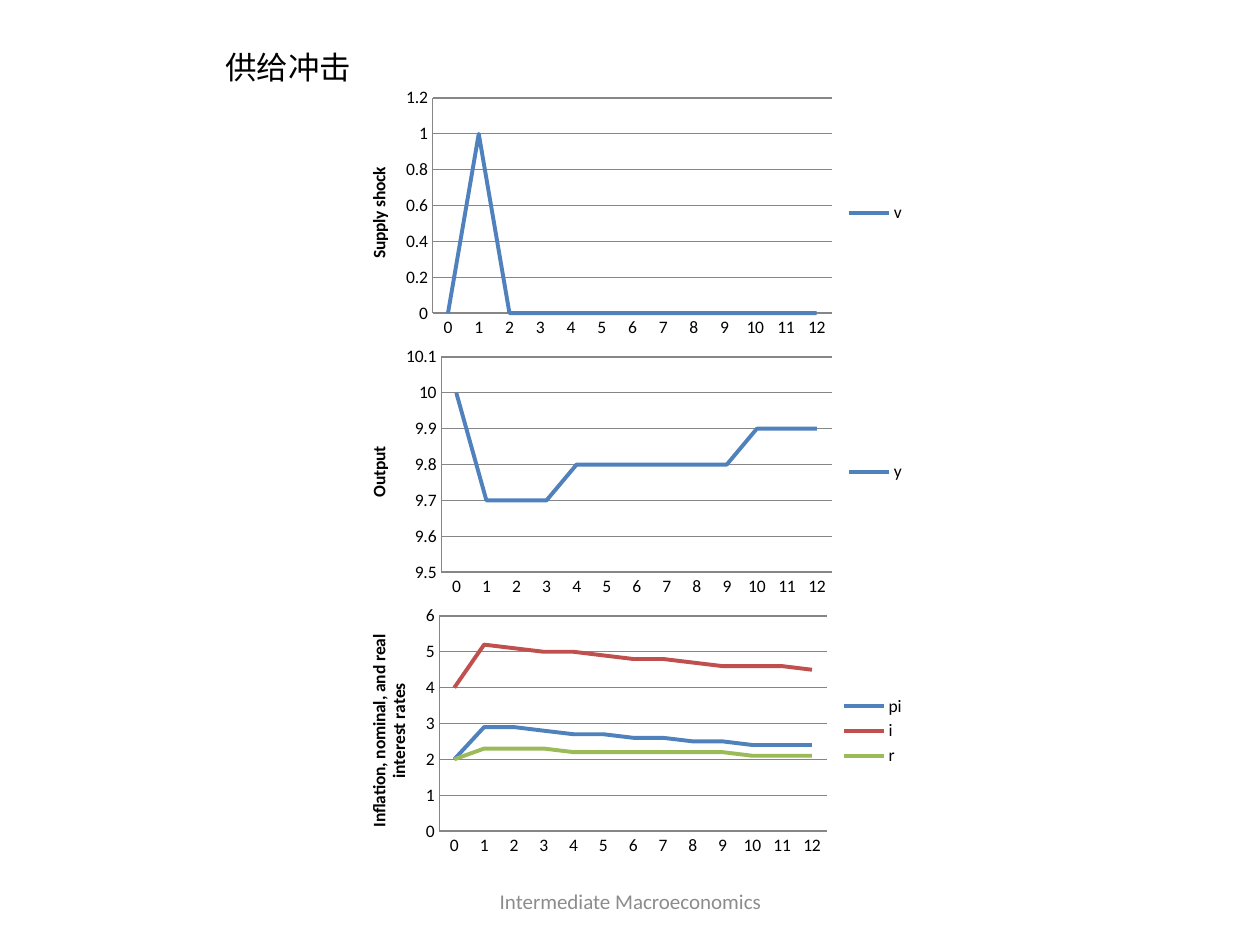
from dataclasses import dataclass

import pptx
import pptx.chart.data
import pptx.dml.color
import pptx.enum.chart
import pptx.enum.text
import pptx.util

SCALE = 914400 / 126
TIMES = [str(t) for t in range(13)]


@dataclass(frozen=True)
class Theme:
    font: str = "Calibri"
    head: int = 18
    foot: int = 12
    small: int = 10
    line: float = 2.25
    ink: str = "000000"
    mute: str = "8C8C8C"
    grid: str = "868686"
    blue: str = "4F81BD"
    red: str = "C0504D"
    green: str = "9BBB59"


THEME = Theme()


@dataclass(frozen=True)
class Box:
    left: int
    top: int
    width: int
    height: int

    def emu(self) -> list[int]:
        sides = (self.left, self.top, self.width, self.height)
        return [px(side) for side in sides]


@dataclass(frozen=True)
class Label:
    text: str
    box: Box
    size: int
    color: str
    align: pptx.enum.text.PP_ALIGN
    anchor: pptx.enum.text.MSO_ANCHOR


@dataclass(frozen=True)
class Series:
    name: str
    color: str
    values: list[float]


@dataclass(frozen=True)
class Panel:
    title: str
    low: float
    high: float
    step: float
    series: list[Series]


LABELS = [
    Label("Intermediate Macroeconomics", Box(431, 876, 399, 50),
          THEME.foot, THEME.mute,
          pptx.enum.text.PP_ALIGN.CENTER, pptx.enum.text.MSO_ANCHOR.MIDDLE),
    Label("供给冲击", Box(213, 42, 843, 50), THEME.head, THEME.ink,
          pptx.enum.text.PP_ALIGN.LEFT, pptx.enum.text.MSO_ANCHOR.TOP),
]

PANELS = [
    Panel("Supply shock", 0, 1.2, 0.2, [
        Series("v", THEME.blue, [0, 1] + [0] * 11),
    ]),
    Panel("Output", 9.5, 10.1, 0.1, [
        Series("y", THEME.blue, [10, 9.7, 9.7, 9.7, 9.8, 9.8, 9.8,
                                 9.8, 9.8, 9.8, 9.9, 9.9, 9.9]),
    ]),
    Panel("Inflation, nominal, and real interest rates", 0, 6, 1, [
        Series("pi", THEME.blue, [2, 2.9, 2.9, 2.8, 2.7, 2.7, 2.6,
                                  2.6, 2.5, 2.5, 2.4, 2.4, 2.4]),
        Series("i", THEME.red, [4, 5.2, 5.1, 5, 5, 4.9, 4.8,
                                4.8, 4.7, 4.6, 4.6, 4.6, 4.5]),
        Series("r", THEME.green, [2, 2.3, 2.3, 2.3, 2.2, 2.2, 2.2,
                                  2.2, 2.2, 2.2, 2.1, 2.1, 2.1]),
    ]),
]
FIRST = Box(342, 83, 576, 260)
PITCH = 259


def px(count: int) -> int:
    return pptx.util.Emu(round(count * SCALE))


def rgb(code: str) -> pptx.dml.color.RGBColor:
    return pptx.dml.color.RGBColor.from_string(code)


def set_font(font, size: int, color: str) -> None:
    font.name = THEME.font
    font.size = pptx.util.Pt(size)
    font.color.rgb = rgb(color)


def set_line(line, color: str, width: float) -> None:
    line.color.rgb = rgb(color)
    line.width = pptx.util.Pt(width)


def add_label(slide, label: Label) -> None:
    frame = slide.shapes.add_textbox(*label.box.emu()).text_frame
    frame.word_wrap = True
    frame.vertical_anchor = label.anchor
    para = frame.paragraphs[0]
    para.text = label.text
    para.alignment = label.align
    set_font(para.font, label.size, label.color)


def style_axes(chart, panel: Panel) -> None:
    beside = pptx.enum.chart.XL_TICK_LABEL_POSITION.NEXT_TO_AXIS
    for axis in (chart.category_axis, chart.value_axis):
        axis.major_tick_mark = pptx.enum.chart.XL_TICK_MARK.NONE
        axis.minor_tick_mark = pptx.enum.chart.XL_TICK_MARK.NONE
        axis.tick_label_position = beside
        set_line(axis.format.line, THEME.grid, 0.75)
    axis = chart.value_axis
    axis.minimum_scale = panel.low
    axis.maximum_scale = panel.high
    axis.major_unit = panel.step
    axis.has_major_gridlines = True
    set_line(axis.major_gridlines.format.line, THEME.grid, 0.75)
    axis.tick_labels.number_format = "General"
    axis.tick_labels.number_format_is_linked = False
    para = axis.axis_title.text_frame.paragraphs[0]
    para.text = panel.title
    set_font(para.font, THEME.small, THEME.ink)
    para.font.bold = True


def add_panel(slide, panel: Panel, box: Box) -> None:
    data = pptx.chart.data.CategoryChartData()
    data.categories = TIMES
    for item in panel.series:
        data.add_series(item.name, item.values)
    kind = pptx.enum.chart.XL_CHART_TYPE.LINE
    chart = slide.shapes.add_chart(kind, *box.emu(), data).chart
    set_font(chart.font, THEME.small, THEME.ink)
    chart.has_title = False
    chart.has_legend = True
    chart.legend.position = pptx.enum.chart.XL_LEGEND_POSITION.RIGHT
    chart.legend.include_in_layout = False
    style_axes(chart, panel)
    plot = chart.plots[0]
    plot.vary_by_categories = False
    for line, item in zip(plot.series, panel.series):
        line.smooth = False
        line.marker.style = pptx.enum.chart.XL_MARKER_STYLE.NONE
        set_line(line.format.line, item.color, THEME.line)


def main() -> None:
    deck = pptx.Presentation()
    deck.slide_width = px(1260)
    deck.slide_height = px(945)
    slide = deck.slides.add_slide(deck.slide_layouts[6])
    for label in LABELS:
        add_label(slide, label)
    for row, panel in enumerate(PANELS):
        top = FIRST.top + row * PITCH
        add_panel(slide, panel, Box(FIRST.left, top, FIRST.width, FIRST.height))
    deck.save("out.pptx")


if __name__ == "__main__":
    main()
